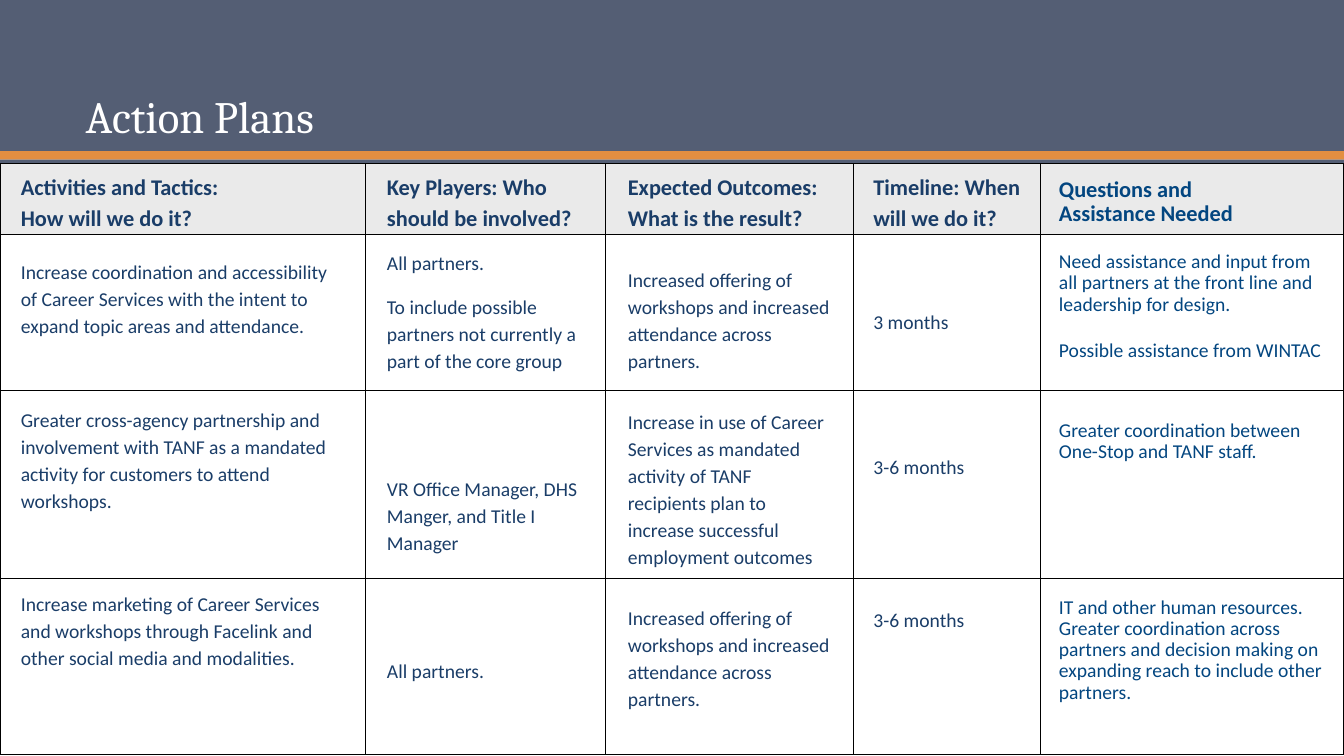
from dataclasses import dataclass

from lxml import etree
from pptx import Presentation
from pptx.dml.color import RGBColor
from pptx.enum.shapes import MSO_SHAPE
from pptx.enum.text import MSO_ANCHOR
from pptx.oxml.ns import qn
from pptx.util import Pt

RECTANGLE = MSO_SHAPE.RECTANGLE
TOP, BOTTOM = MSO_ANCHOR.TOP, MSO_ANCHOR.BOTTOM


@dataclass(frozen=True)
class Theme:
    slate: str = "545E74"
    orange: str = "E38E41"
    white: str = "FFFFFF"
    header_fill: str = "EAEAEA"
    grid: str = "000000"
    navy: str = "1A3D68"
    blue: str = "034680"
    title_font: str = "Cambria"
    body_font: str = "Calibri"
    title_size: float = 32
    heading_size: float = 16
    body_size: float = 14


THEME = Theme()
WIDTH, HEIGHT = 960, 540
GRID_TOP = 117
COLUMN_WIDTHS = [261, 171.5, 177, 133.5, 217]
ROW_HEIGHTS = [50.5, 111.5, 134.5, 125.5]

# Top, height and colour of the bands across the slide
BANDS = [
    (0, 108, THEME.slate),
    (108, 6, THEME.orange),
    (114, 6, THEME.slate),
]

# Each column: frame (left, top, width, height), colour, line spacing,
# heading paragraphs, then body paragraphs with the space before each
COLUMNS = [
    ((7.8, 117.4, 246.2, 398), THEME.navy, 1.15,
     ["Activities and Tactics:\nHow will we do it?"],
     [(18, "Increase coordination and accessibility of Career Services with "
           "the intent to expand topic areas and attendance."),
      (48, "Greater cross-agency partnership and involvement with TANF as a "
           "mandated activity for customers to attend workshops."),
      (54, "Increase marketing of Career Services and workshops through "
           "Facelink and other social media and modalities.")]),
    ((269.3, 117.4, 157, 366.5), THEME.navy, 1.15,
     ["Key Players: Who should be involved?"],
     [(12, "All partners."),
      (12, "To include possible partners not currently a part of the core group"),
      (72, "VR Office Manager, DHS Manger, and Title I Manager"),
      (72, "All partners.")]),
    ((441.4, 117.4, 159.8, 406.8), THEME.navy, 1.15,
     ["Expected Outcomes:", "What is the result?"],
     [(24, "Increased offering of workshops and increased attendance across "
           "partners."),
      (24, "Increase in use of Career Services as mandated activity of TANF "
           "recipients plan to increase successful employment outcomes"),
      (24, "Increased offering of workshops and increased attendance across "
           "partners.")]),
    ((616.8, 117.4, 124.6, 350.6), THEME.navy, 1.15,
     ["Timeline: When will we do it?"],
     [(54, "3 months"), (84, "3-6 months"), (90, "3-6 months")]),
    ((749.3, 123.8, 203, 399.6), THEME.blue, 0.9,
     ["Questions and\nAssistance Needed"],
     [(18, "Need assistance and input from all partners at the front line and "
           "leadership for design."),
      (18, "Possible assistance from WINTAC"),
      (42, "Greater coordination between\nOne-Stop and TANF staff."),
      (96, "IT and other human resources. Greater coordination across partners "
           "and decision making on expanding reach to include other partners.")]),
]


def rgb(color):
    return RGBColor.from_string(color)


def add_band(slide, top, height, color):
    band = slide.shapes.add_shape(RECTANGLE, 0, Pt(top), Pt(WIDTH), Pt(height))
    band.shadow.inherit = False
    band.fill.solid()
    band.fill.fore_color.rgb = rgb(color)
    band.line.fill.background()


def add_frame(slide, frame, anchor):
    text = slide.shapes.add_textbox(*map(Pt, frame)).text_frame
    text.word_wrap = True
    text.vertical_anchor = anchor
    return text


def write(paragraph, words, font, size, color, spacing, before=0, bold=False):
    paragraph.text = words
    paragraph.line_spacing = spacing
    paragraph.space_before = Pt(before)
    paragraph.font.name = font
    paragraph.font.size = Pt(size)
    paragraph.font.bold = bold
    paragraph.font.color.rgb = rgb(color)


def add_title(slide, words):
    title = add_frame(slide, (54, 24.5, 804, 81.4), BOTTOM)
    write(title.paragraphs[0], words, THEME.title_font, THEME.title_size,
          THEME.white, 0.9)


def add_cell_borders(cell):
    properties = cell._tc.get_or_add_tcPr()
    for side in ("a:lnL", "a:lnR", "a:lnT", "a:lnB"):
        border = etree.SubElement(properties, qn(side), w=str(Pt(1)))
        fill = etree.SubElement(border, qn("a:solidFill"))
        etree.SubElement(fill, qn("a:srgbClr"), val=THEME.grid)


def add_grid(slide):
    grid = slide.shapes.add_table(
        len(ROW_HEIGHTS), len(COLUMN_WIDTHS), 0, Pt(GRID_TOP),
        Pt(WIDTH), Pt(sum(ROW_HEIGHTS))).table
    grid.first_row = False
    grid.horz_banding = False
    for column, width in zip(grid.columns, COLUMN_WIDTHS):
        column.width = Pt(width)
    for number, (row, height) in enumerate(zip(grid.rows, ROW_HEIGHTS)):
        row.height = Pt(height)
        for cell in row.cells:
            add_cell_borders(cell)
            if number == 0:
                cell.fill.solid()
                cell.fill.fore_color.rgb = rgb(THEME.header_fill)
            else:
                cell.fill.background()


def add_column_text(slide, frame, color, spacing, headings, entries):
    text = add_frame(slide, frame, TOP)
    lines = [(0, heading, THEME.heading_size, True) for heading in headings]
    lines += [(before, entry, THEME.body_size, False) for before, entry in entries]
    for number, (before, words, size, bold) in enumerate(lines):
        paragraph = text.add_paragraph() if number else text.paragraphs[0]
        write(paragraph, words, THEME.body_font, size, color, spacing,
              before, bold)


def main():
    deck = Presentation()
    deck.slide_width, deck.slide_height = Pt(WIDTH), Pt(HEIGHT)
    slide = deck.slides.add_slide(deck.slide_layouts[6])

    # Title area
    for band in BANDS:
        add_band(slide, *band)
    add_title(slide, "Action Plans")

    # Grid with one text block over each column
    add_grid(slide)
    for column in COLUMNS:
        add_column_text(slide, *column)

    deck.save("out.pptx")


if __name__ == "__main__":
    main()
